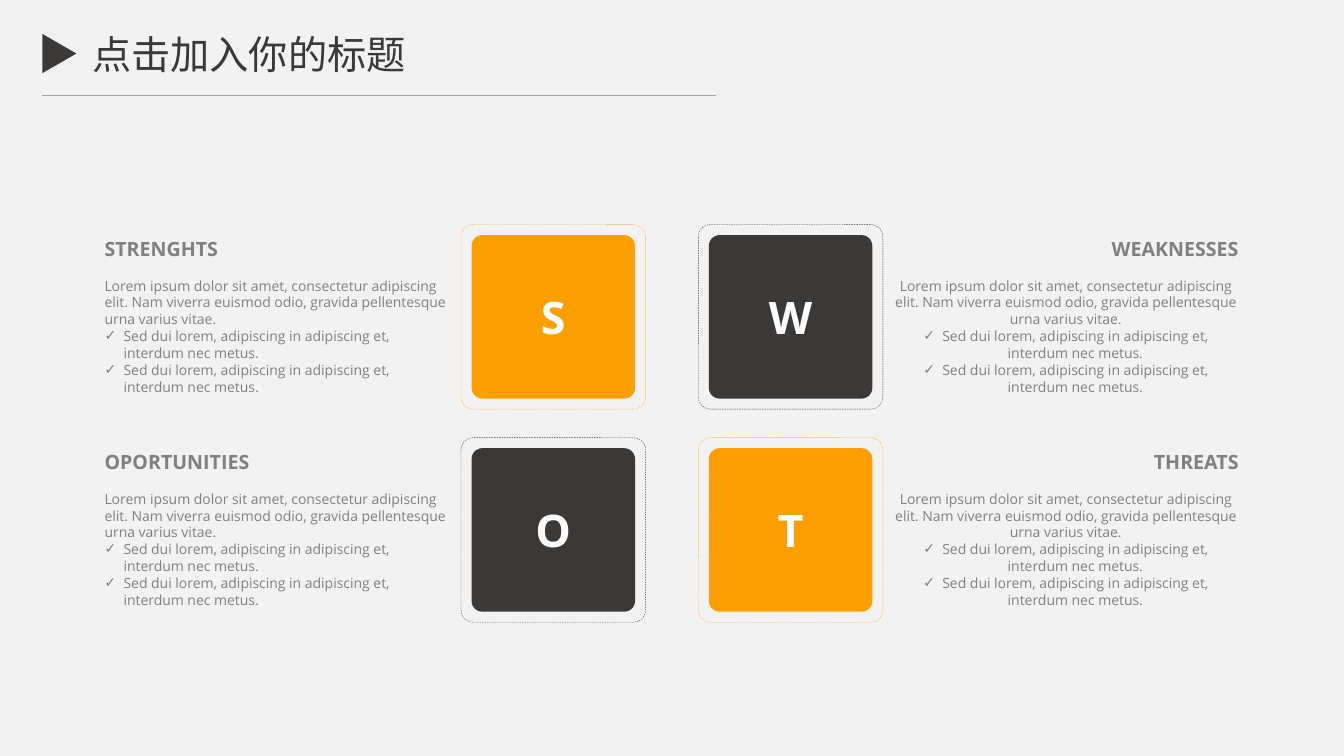
from lxml import etree
from pptx import Presentation
from pptx.dml.color import RGBColor
from pptx.enum.dml import MSO_LINE
from pptx.enum.shapes import MSO_CONNECTOR, MSO_SHAPE
from pptx.enum.text import MSO_ANCHOR, MSO_AUTO_SIZE, PP_ALIGN
from pptx.oxml.ns import qn
from pptx.util import Cm, Pt

LEFT, CENTER, RIGHT = PP_ALIGN.LEFT, PP_ALIGN.CENTER, PP_ALIGN.RIGHT
TOP, MIDDLE = MSO_ANCHOR.TOP, MSO_ANCHOR.MIDDLE
FIXED_SIZE = MSO_AUTO_SIZE.NONE
ROUNDED, TRIANGLE = MSO_SHAPE.ROUNDED_RECTANGLE, MSO_SHAPE.ISOSCELES_TRIANGLE
STRAIGHT, DOTTED = MSO_CONNECTOR.STRAIGHT, MSO_LINE.DASH

ORANGE = RGBColor(0xFE, 0x9F, 0x00)
DARK = RGBColor(0x3B, 0x38, 0x38)
GREY = RGBColor(0x80, 0x80, 0x80)
RULE_GREY = RGBColor(0xA6, 0xA6, 0xA6)
WHITE = RGBColor(0xFF, 0xFF, 0xFF)
BACKGROUND = RGBColor(0xF2, 0xF2, 0xF2)

TITLE_FONT, BODY_FONT = "Noto Sans CJK SC", "Open Sans"
COMPARISON_LAYOUT = 4
COLUMN_PITCH, ROW_PITCH = 5.98, 5.37
FRAME_LEFT, FRAME_TOP, FRAME_SIZE = 11.62, 5.66, 4.65
TILE_SIZE = 4.12
TEXT_LEFTS, TEXT_TOP = (2.38, 22.25), 5.84
INTRO = ("Lorem ipsum dolor sit amet, consectetur adipiscing elit. "
         "Nam viverra euismod odio, gravida pellentesque urna varius vitae.")
POINT = "Sed dui lorem, adipiscing in adipiscing et, interdum nec metus."
QUADRANTS = [
    ("S", "STRENGHTS", ORANGE),
    ("W", "WEAKNESSES", DARK),
    ("O", "OPORTUNITIES", DARK),
    ("T", "THREATS", ORANGE),
]


def place(shape, left, top, width, height):
    """Move and size a shape, in centimetres."""
    shape.left, shape.top = Cm(left), Cm(top)
    shape.width, shape.height = Cm(width), Cm(height)


def style_font(font, name, size, color, bold=False):
    """Set the look of a font."""
    font.name, font.size, font.bold = name, Pt(size), bold
    font.color.rgb = color


def set_bullet(paragraph, character=None):
    """Give a paragraph a hanging bullet, or none at all."""
    properties = paragraph._p.get_or_add_pPr()
    indent = Cm(0.48) if character else 0
    properties.set("marL", str(indent))
    properties.set("indent", str(-indent))
    if character:
        bullet = etree.SubElement(properties, qn("a:buChar"))
        bullet.set("char", character)
    else:
        etree.SubElement(properties, qn("a:buNone"))


def add_header(slide):
    """Fill the title and draw its triangle and rule."""
    title = slide.shapes.title
    place(title, 1.5, 0.76, 9.55, 1.19)
    frame = title.text_frame
    frame.text = "点击加入你的标题"
    frame.margin_left = frame.margin_right = frame.margin_top = frame.margin_bottom = 0
    frame.word_wrap, frame.auto_size = True, FIXED_SIZE
    frame.vertical_anchor = MIDDLE
    paragraph = frame.paragraphs[0]
    paragraph.alignment = CENTER
    style_font(paragraph.font, TITLE_FONT, 28, DARK)
    east_asian = etree.SubElement(paragraph.font._element, qn("a:ea"))
    east_asian.set("typeface", TITLE_FONT)

    marker = slide.shapes.add_shape(TRIANGLE, Cm(1), Cm(0.92), Cm(0.99), Cm(0.86))
    marker.rotation = 90
    marker.shadow.inherit = False
    marker.fill.solid()
    marker.fill.fore_color.rgb = DARK
    marker.line.fill.background()

    rule = slide.shapes.add_connector(STRAIGHT, Cm(1.06), Cm(2.41), Cm(18.04), Cm(2.41))
    rule.line.color.rgb = RULE_GREY
    rule.line.width = Pt(0.5)
    etree.SubElement(rule._element.spPr, qn("a:effectLst"))


def add_rounded_square(slide, left, top, size):
    """Add a rounded square without a shadow."""
    square = slide.shapes.add_shape(ROUNDED, Cm(left), Cm(top), Cm(size), Cm(size))
    square.adjustments[0] = 0.066
    square.shadow.inherit = False
    return square


def add_tile(slide, letter, color, column, row):
    """Add a lettered tile inside its dashed frame."""
    left = FRAME_LEFT + column * COLUMN_PITCH
    top = FRAME_TOP + row * ROW_PITCH
    inset = (FRAME_SIZE - TILE_SIZE) / 2
    tile = add_rounded_square(slide, left + inset, top + inset, TILE_SIZE)
    tile.fill.solid()
    tile.fill.fore_color.rgb = color
    tile.line.fill.background()
    tile.text_frame.text = letter
    tile.text_frame.vertical_anchor = MIDDLE
    paragraph = tile.text_frame.paragraphs[0]
    paragraph.alignment = CENTER
    style_font(paragraph.font, BODY_FONT, 32, WHITE, True)

    outline = add_rounded_square(slide, left, top, FRAME_SIZE)
    outline.fill.background()
    outline.line.color.rgb = color
    outline.line.width = Pt(0.25)
    outline.line.dash_style = DOTTED


def fill_description(placeholder, heading, column, row):
    """Write a quadrant's heading, introduction and list."""
    place(placeholder, TEXT_LEFTS[column], TEXT_TOP + row * ROW_PITCH, 9.22, 4.27)
    frame = placeholder.text_frame
    frame.word_wrap, frame.auto_size = True, FIXED_SIZE
    frame.vertical_anchor = TOP
    frame.text = "\n".join([heading, INTRO, POINT, POINT])
    for index, paragraph in enumerate(frame.paragraphs):
        is_heading = index == 0
        paragraph.space_before = Pt(12 if index == 1 else 0)
        paragraph.alignment = LEFT if column == 0 else RIGHT if is_heading else CENTER
        set_bullet(paragraph, "✓" if index > 1 else None)
        style_font(paragraph.font, BODY_FONT, 14 if is_heading else 10, GREY, is_heading)


def main():
    """Build the SWOT slide."""
    presentation = Presentation()
    presentation.slide_width, presentation.slide_height = Cm(33.87), Cm(19.05)
    slide = presentation.slides.add_slide(presentation.slide_layouts[COMPARISON_LAYOUT])
    slide.background.fill.solid()
    slide.background.fill.fore_color.rgb = BACKGROUND
    add_header(slide)
    for index, (letter, heading, color) in enumerate(QUADRANTS):
        row, column = divmod(index, 2)
        add_tile(slide, letter, color, column, row)
        fill_description(slide.placeholders[index + 1], heading, column, row)
    presentation.save("out.pptx")


if __name__ == "__main__":
    main()
